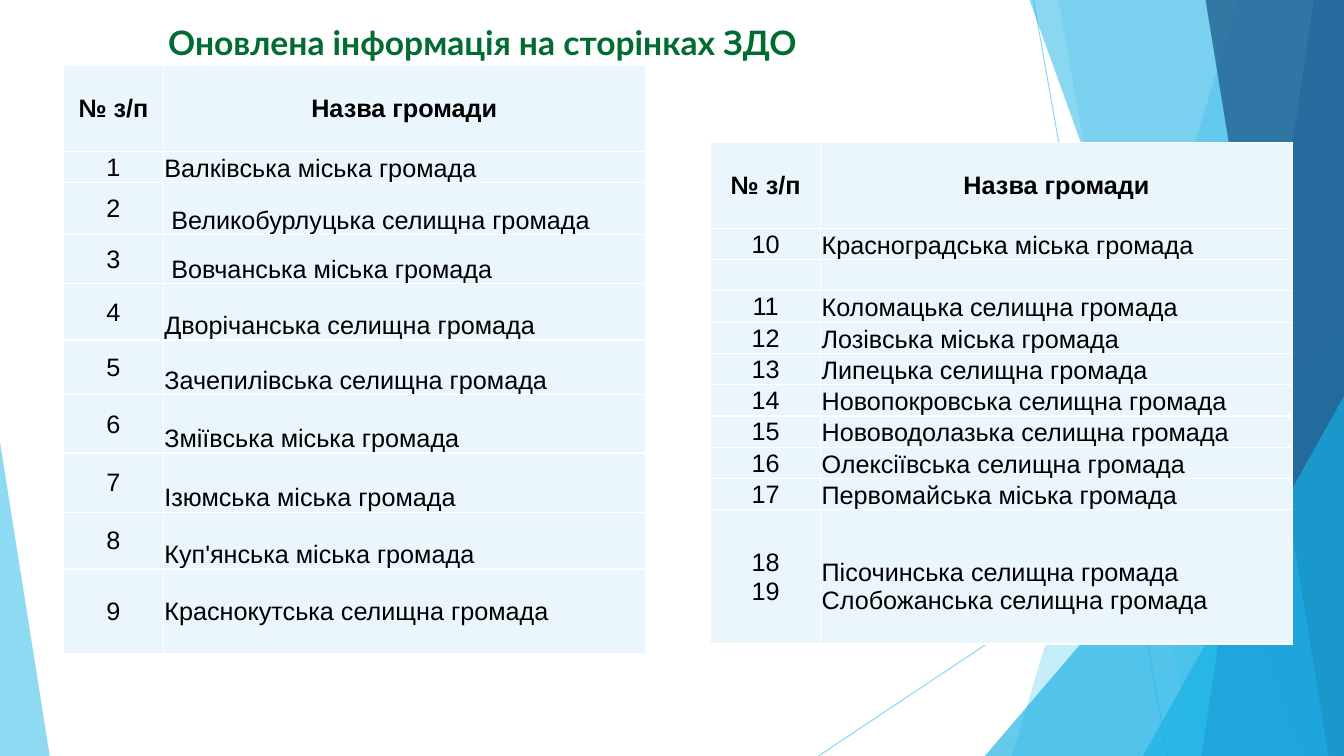
from dataclasses import dataclass

from pptx import Presentation
from pptx.dml.color import RGBColor
from pptx.enum.shapes import MSO_CONNECTOR as Link, MSO_SHAPE as Kind
from pptx.enum.text import MSO_ANCHOR as Anchor, PP_ALIGN as Align
from pptx.oxml.ns import qn
from pptx.oxml.xmlchemy import OxmlElement as Node
from pptx.util import Inches, Pt

SKY = RGBColor(0x5F, 0xCB, 0xEF)
CYAN = RGBColor(0x17, 0xB0, 0xE4)
BLUE = RGBColor(0x2E, 0x83, 0xC3)
NAVY = RGBColor(0x22, 0x62, 0x92)
GREEN = RGBColor(0x00, 0x6C, 0x31)
PALE = RGBColor(0xEA, 0xF6, 0xFC)
WHITE = RGBColor(0xFF, 0xFF, 0xFF)
BLACK = RGBColor(0x00, 0x00, 0x00)

WIDE, HIGH = Inches(13.33), Inches(7.5)
PAD = Inches(0.01)


def x(share: float) -> int:
    """Percent of the slide width."""
    return round(WIDE * share / 100)


def y(share: float) -> int:
    """Percent of the slide height."""
    return round(HIGH * share / 100)


@dataclass(frozen=True)
class Ray:
    start: tuple[float, float]
    end: tuple[float, float]


@dataclass(frozen=True)
class Band:
    """A full-height strip from its slanted left side to the right edge."""
    top: float
    foot: float
    color: RGBColor
    alpha: int


@dataclass(frozen=True)
class Wedge:
    left: float
    top: float
    width: float
    peak: float
    color: RGBColor
    alpha: int


@dataclass(frozen=True)
class Row:
    mark: str
    name: str
    height: float
    side: Anchor = Anchor.BOTTOM
    drop: float = 0


@dataclass(frozen=True)
class Grid:
    left: float
    top: float
    cols: tuple[float, float]
    rows: list[Row]


HEAD = 11.35
LINE = 3.87

RAYS = [Ray((76.9, 0), (86.87, 100)), Ray((100, 53.7), (60.9, 100))]

FACETS = [
    Band(92.1, 75.3, SKY, 36),
    Band(78.75, 88.75, SKY, 20),
    Wedge(73.28, 44.4, 26.72, 1, CYAN, 66),
    Band(76.6, 96.85, CYAN, 50),
    Band(97.75, 89.4, BLUE, 70),
    Band(89.7, 98.85, NAVY, 80),
    Wedge(85.05, 52.4, 14.95, 1, CYAN, 66),
    Wedge(0, 58.5, 3.7, 0, SKY, 70),
]

TOP = Row("№ з/п", "Назва громади", HEAD, Anchor.MIDDLE)

FIRST = Grid(4.73, 8.7, (7.43, 35.85), [
    TOP,
    Row("1", "Валківська міська громада", LINE),
    Row("2", " Великобурлуцька селищна громада", 6.85),
    Row("3", " Вовчанська міська громада", 6.5),
    Row("4", "Дворічанська селищна громада", 7.45),
    Row("5", "Зачепилівська селищна громада", 7.25),
    Row("6", "Зміївська міська громада", 7.7),
    Row("7", "Ізюмська міська громада", 7.85),
    Row("8", "Куп'янська міська громада", 7.5),
    Row("9", "Краснокутська селищна громада", 11.25, Anchor.MIDDLE),
])

SHORT = [
    ("10", "Красноградська міська громада"),
    ("", ""),
    ("11", "Коломацька селищна громада"),
    ("12", "Лозівська міська громада"),
    ("13", "Липецька селищна громада"),
    ("14", "Новопокровська селищна громада"),
    ("15", "Нововодолазька селищна громада"),
    ("16", "Олексіївська селищна громада"),
    ("17", "Первомайська міська громада"),
]

NEXT = Grid(52.88, 18.85, (8.18, 35.1), [
    TOP,
    *(Row(mark, name, LINE) for mark, name in SHORT),
    Row("18\n19", "Пісочинська селищна громада\nСлобожанська селищна громада",
        17.75, Anchor.MIDDLE, 2.6),
])


def write(frame, text: str, *, font: str = "Arial", size: float = 18,
          color: RGBColor = BLACK, bold: bool = False,
          align: Align = Align.LEFT) -> None:
    frame.word_wrap = True
    for spot, line in enumerate(text.split("\n")):
        para = frame.add_paragraph() if spot else frame.paragraphs[0]
        para.alignment = align
        if not line:
            continue
        run = para.add_run()
        run.text = line
        run.font.name, run.font.size = font, Pt(size)
        run.font.bold, run.font.color.rgb = bold, color


def fade(shape, alpha: int) -> None:
    for color in shape.element.spPr.iter(qn("a:srgbClr")):
        node = Node("a:alpha")
        node.set("val", str(alpha * 1000))
        color.append(node)


def draw_ray(slide, ray: Ray) -> None:
    (ax, ay), (bx, by) = ray.start, ray.end
    line = slide.shapes.add_connector(Link.STRAIGHT, x(ax), y(ay), x(bx), y(by))
    line.line.color.rgb, line.line.width = SKY, Pt(0.75)
    line.element.spPr.append(Node("a:effectLst"))
    fade(line, 70)


def draw_facet(slide, facet: Band | Wedge) -> None:
    if isinstance(facet, Band):
        path = slide.shapes.build_freeform(x(facet.top), 0)
        path.add_line_segments([(WIDE, 0), (WIDE, HIGH), (x(facet.foot), HIGH)])
        shape = path.convert_to_shape()
    else:
        shape = slide.shapes.add_shape(
            Kind.ISOSCELES_TRIANGLE, x(facet.left), y(facet.top),
            x(facet.width), y(100 - facet.top))
        shape.adjustments[0] = facet.peak
    shape.shadow.inherit = False
    shape.fill.solid()
    shape.fill.fore_color.rgb = facet.color
    shape.line.fill.background()
    fade(shape, facet.alpha)


def edge(cell) -> None:
    """Put a white border on each side of the cell."""
    props = cell._tc.get_or_add_tcPr()
    for side in "LRTB":
        line, fill, color = Node(f"a:ln{side}"), Node("a:solidFill"), Node("a:srgbClr")
        line.set("w", str(Pt(1)))
        color.set("val", str(WHITE))
        fill.append(color)
        line.append(fill)
        props.append(line)


def draw_grid(slide, grid: Grid) -> None:
    table = slide.shapes.add_table(
        len(grid.rows), 2, x(grid.left), y(grid.top), x(sum(grid.cols)),
        y(sum(row.height for row in grid.rows))).table
    table.first_row = table.horz_banding = False
    for col, width in zip(table.columns, grid.cols):
        col.width = x(width)
    for spot, row in enumerate(grid.rows):
        table.rows[spot].height = y(row.height)
        head = row is TOP
        for col, text in enumerate((row.mark, row.name)):
            cell = table.cell(spot, col)
            edge(cell)
            cell.fill.solid()
            cell.fill.fore_color.rgb = PALE
            cell.margin_left = cell.margin_right = PAD
            cell.margin_top = y(row.drop) if col and row.drop else PAD
            cell.margin_bottom = 0
            cell.vertical_anchor = row.side if col else Anchor.MIDDLE
            write(cell.text_frame, text, bold=head,
                  align=Align.LEFT if col and not head else Align.CENTER)


def main() -> None:
    deck = Presentation()
    deck.slide_width, deck.slide_height = WIDE, HIGH
    slide = deck.slides.add_slide(deck.slide_layouts[6])
    for ray in RAYS:
        draw_ray(slide, ray)
    for facet in FACETS:
        draw_facet(slide, facet)
    title = slide.shapes.add_textbox(x(11.78), y(2.27), x(70.5), y(9.6))
    write(title.text_frame, "Оновлена інформація на сторінках ЗДО",
          font="Lato", size=24, color=GREEN, bold=True)
    for grid in (FIRST, NEXT):
        draw_grid(slide, grid)
    deck.save("out.pptx")


if __name__ == "__main__":
    main()
